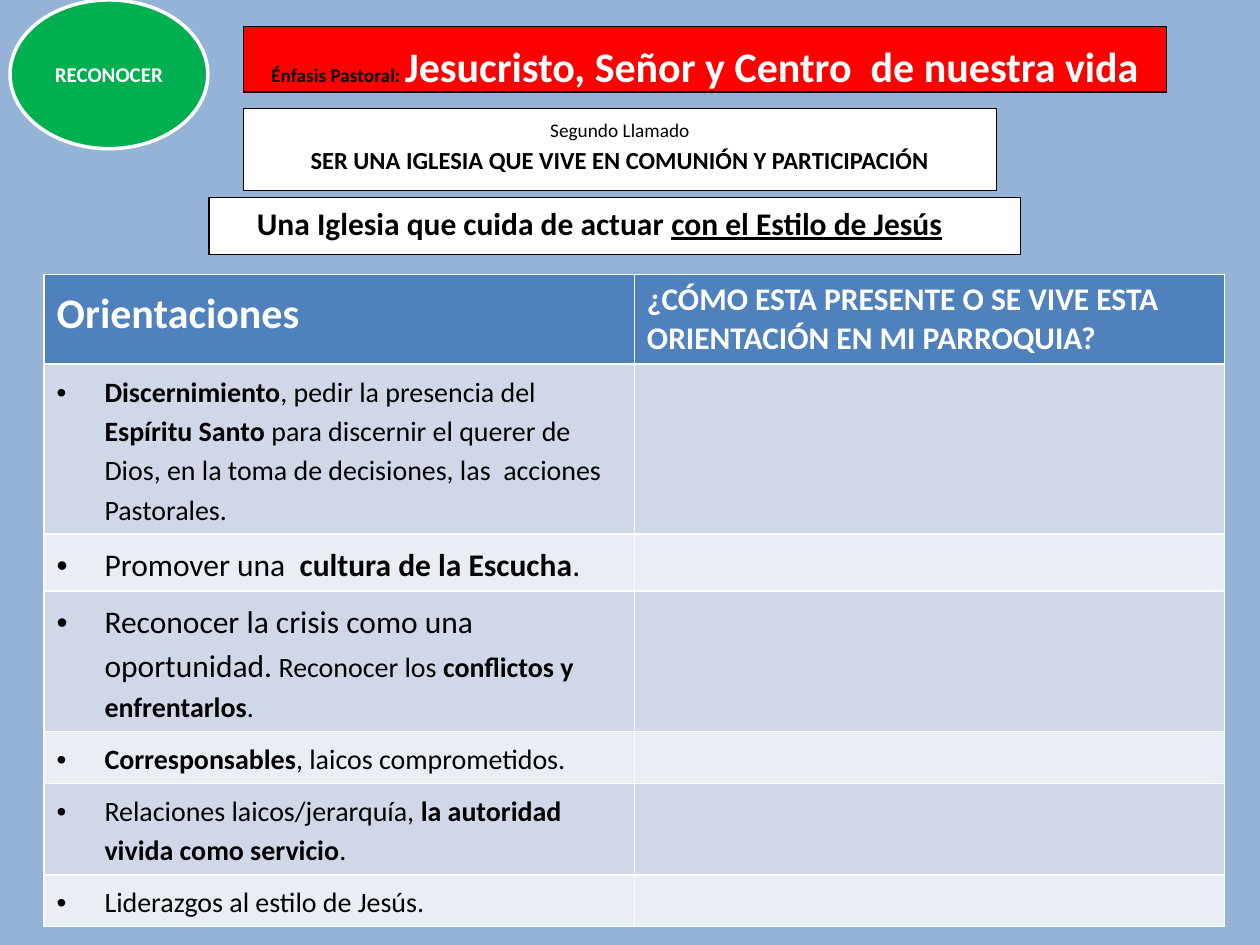
"""Build the slide on the pastoral orientations and how they are lived in the parish."""
from lxml.etree import SubElement
from pptx import Presentation
from pptx.dml.color import RGBColor
from pptx.enum.shapes import MSO_SHAPE as Shape
from pptx.enum.text import MSO_ANCHOR as Anchor, MSO_AUTO_SIZE as AutoSize, PP_ALIGN as Align
from pptx.oxml.ns import qn
from pptx.util import Inches, Pt


def paint(color_format, color):
    """Set a fill's colour from a hex string."""
    color_format.solid()
    color_format.fore_color.rgb = RGBColor.from_string(color)


def write(para, spans, color="000000", spacing=1.15, align=Align.LEFT):
    """Add spans of (text, size, bold) to a paragraph and return the last one."""
    para.line_spacing = spacing
    para.alignment = align
    for text, size, bold in spans:
        span = para.add_run()
        span.text = text
        span.font.name = "Calibri"
        span.font.size = Pt(size)
        span.font.bold = bold
        paint(span.font.fill, color)
    return span


deck = Presentation()
deck.slide_width, deck.slide_height = Inches(10), Inches(7.5)
page = deck.slides.add_slide(deck.slide_layouts[5])
paint(page.background.fill, "95B3D7")

title = page.shapes.title
badge = page.shapes.add_shape(Shape.OVAL, 0, 0, 0, 0)
call = page.shapes.add_shape(Shape.RECTANGLE, 0, 0, 0, 0)
style = page.shapes.add_shape(Shape.RECTANGLE, 0, 0, 0, 0)

boxes = [
    (title, (1.93, 0.21, 7.33, 0.52), "FF0000", "000000", 0.75, Anchor.TOP),
    (badge, (0.08, 0, 1.57, 1.18), "00B050", "FFFFFF", 2, Anchor.MIDDLE),
    (call, (1.93, 0.86, 5.98, 0.65), "FFFFFF", "000000", 0.75, Anchor.TOP),
    (style, (1.66, 1.57, 6.44, 0.45), "FFFFFF", "000000", 0.75, Anchor.TOP),
]
for box, place, fill, line, width, anchor in boxes:
    box.left, box.top, box.width, box.height = map(Inches, place)
    paint(box.fill, fill)
    paint(box.line.fill, line)
    box.line.width = Pt(width)
    box.text_frame.word_wrap = True
    box.text_frame.auto_size = AutoSize.NONE
    box.text_frame.vertical_anchor = anchor
    if box is not title:
        box.shadow.inherit = False

heading = title.text_frame.paragraphs[0]
write(heading, [("Énfasis Pastoral: ", 11, True)], align=Align.CENTER)
write(heading, [("Jesucristo, Señor y Centro  de nuestra vida", 24, True)], "FFFFFF", align=Align.CENTER)
write(badge.text_frame.paragraphs[0], [("RECONOCER", 12, True)], "FFFFFF", 1.0, Align.CENTER)
write(call.text_frame.paragraphs[0], [("Segundo Llamado", 11, False)], align=Align.CENTER)
write(call.text_frame.add_paragraph(),
      [("SER UNA IGLESIA QUE VIVE EN COMUNIÓN Y PARTICIPACIÓN", 14, True)], align=Align.CENTER)
style.text_frame.margin_left = Inches(0.38)
underlined = write(style.text_frame.paragraphs[0],
                   [("Una Iglesia que cuida de actuar ", 18, True),
                    ("con el Estilo de Jesús", 18, True)], spacing=1.0)
underlined.font.underline = True

orientations = [
    (1.33, [("Discernimiento", 16, True), (", pedir la presencia del ", 16, False),
            ("Espíritu Santo", 16, True),
            (" para discernir el querer de Dios, en la toma de decisiones, las  acciones Pastorales.", 16, False)]),
    (0.44, [("Promover una  ", 18, False), ("cultura de la Escucha", 18, True), (".", 18, False)]),
    (1.10, [("Reconocer la crisis como una oportunidad.", 18, False), (" Reconocer los ", 16, False),
            ("conflictos y enfrentarlos", 16, True), (".", 16, False)]),
    (0.41, [("Corresponsables", 16, True), (", laicos comprometidos.", 16, False)]),
    (0.71, [("Relaciones laicos/jerarquía, ", 16, False),
            ("la autoridad vivida como servicio", 16, True), (".", 16, False)]),
    (0.41, [("Liderazgos al estilo de Jesús.", 16, False)]),
]
table = page.shapes.add_table(len(orientations) + 1, 2, Inches(0.35), Inches(2.18),
                              Inches(9.37), Inches(5.09)).table
table.rows[0].height = Inches(0.69)
headers = [("Orientaciones", 24, 1.15),
           ("¿CÓMO ESTA PRESENTE O SE VIVE ESTA ORIENTACIÓN EN MI PARROQUIA?", 18, 1.0)]
for column, (text, size, spacing) in enumerate(headers):
    cell = table.cell(0, column)
    paint(cell.fill, "4F81BD")
    write(cell.text_frame.paragraphs[0], [(text, size, True)], "FFFFFF", spacing)

for row, (height, spans) in enumerate(orientations, start=1):
    table.rows[row].height = Inches(height)
    for column in range(2):
        paint(table.cell(row, column).fill, "D0D8E8" if row % 2 else "E9EDF4")
    para = table.cell(row, 0).text_frame.paragraphs[0]
    write(para, spans)
    properties = para._p.get_or_add_pPr()
    properties.set("marL", str(Inches(0.38)))
    properties.set("indent", str(-Inches(0.38)))
    SubElement(properties, qn("a:buFont")).set("typeface", "Arial")
    SubElement(properties, qn("a:buChar")).set("char", "•")

deck.save("out.pptx")
